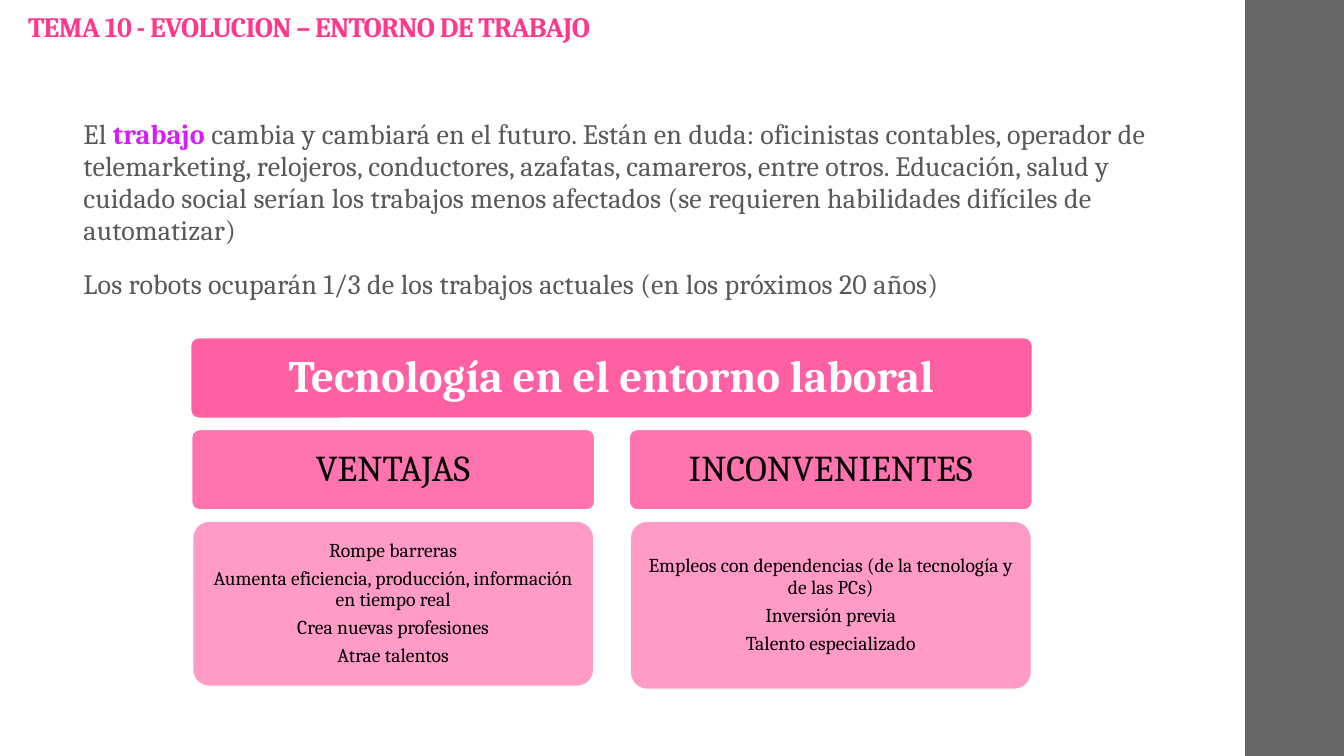
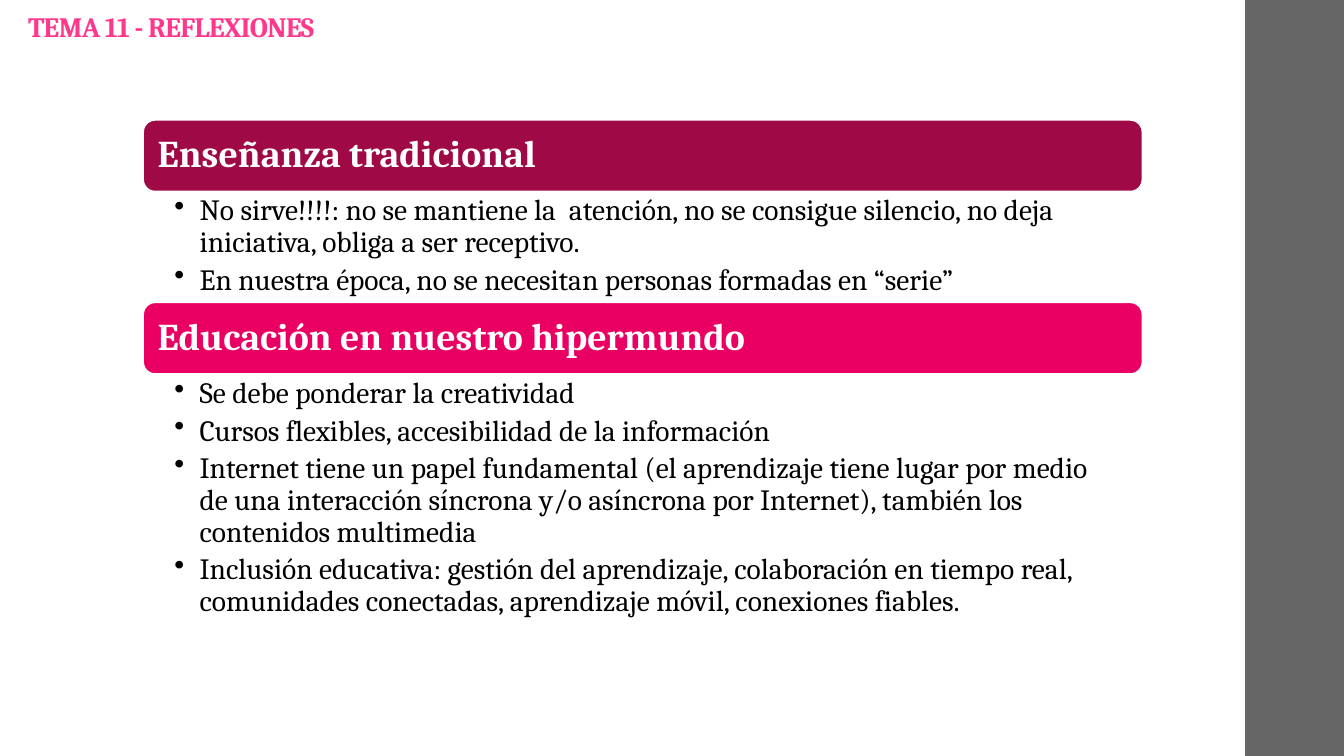
from lxml import etree
from pptx import Presentation
from pptx.dml.color import RGBColor
from pptx.enum.shapes import MSO_SHAPE
from pptx.enum.text import MSO_ANCHOR, PP_ALIGN
from pptx.oxml.ns import qn
from pptx.util import Emu, Pt

PX = 9144  # EMU per px, 100 px to the inch
SLIDE_W, SLIDE_H = 1333, 750
BAND_X = 1235

FONT = "Cambria"
PINK = RGBColor(0xFF, 0x38, 0x8C)
MAGENTA = RGBColor(0xE9, 0x00, 0x62)
WINE = RGBColor(0x9F, 0x0A, 0x46)
VIOLET = RGBColor(0xD5, 0x1D, 0xFB)
DARK_GRAY = RGBColor(0x59, 0x59, 0x59)
BAND_GRAY = RGBColor(0x66, 0x66, 0x66)
WHITE = RGBColor(0xFF, 0xFF, 0xFF)
BLACK = RGBColor(0x00, 0x00, 0x00)

RECT = MSO_SHAPE.RECTANGLE
ROUNDED = MSO_SHAPE.ROUNDED_RECTANGLE
TOP, MIDDLE, BOTTOM = MSO_ANCHOR.TOP, MSO_ANCHOR.MIDDLE, MSO_ANCHOR.BOTTOM
LEFT, CENTER = PP_ALIGN.LEFT, PP_ALIGN.CENTER

INTRO = [
    ("El ", "trabajo",
     " cambia y cambiará en el futuro. Están en duda: oficinistas contables, "
     "operador de telemarketing, relojeros, conductores, azafatas, camareros, "
     "entre otros. Educación, salud y cuidado social serían los trabajos menos "
     "afectados (se requieren habilidades difíciles de automatizar)"),
    ("Los robots ocuparán 1/3 de los trabajos actuales (en los próximos 20 años)",),
]
KEYWORD = "trabajo"

# heading, height of the list box, list
COLUMNS = [
    ("VENTAJAS", 164, [
        "Rompe barreras",
        "Aumenta eficiencia, producción, información en tiempo real",
        "Crea nuevas profesiones",
        "Atrae talentos",
    ]),
    ("INCONVENIENTES", 167, [
        "Empleos con dependencias (de la tecnología y de las PCs)",
        "Inversión previa",
        "Talento especializado",
    ]),
]

# heading, colour, top, height of the list, list
SECTIONS = [
    ("Enseñanza tradicional", WINE, 119, 110, [
        "No sirve!!!!: no se mantiene la  atención, no se consigue silencio, "
        "no deja iniciativa, obliga a ser receptivo.",
        "En nuestra época, no se necesitan personas formadas en “serie”",
    ]),
    ("Educación en nuestro hipermundo", MAGENTA, 300, 281, [
        "Se debe ponderar la creatividad",
        "Cursos flexibles, accesibilidad de la información",
        "Internet tiene un papel fundamental (el aprendizaje tiene lugar por medio "
        "de una interacción síncrona y/o asíncrona por Internet), también los "
        "contenidos multimedia",
        "Inclusión educativa: gestión del aprendizaje, colaboración en tiempo real, "
        "comunidades conectadas, aprendizaje móvil, conexiones fiables.",
    ]),
]


def px(*values):
    return [Emu(v * PX) for v in values]


def set_frame(tf, insets, anchor):
    """Wrap the text; insets run left, top, right, bottom."""
    tf.word_wrap = True
    tf.vertical_anchor = anchor
    (tf.margin_left, tf.margin_top,
     tf.margin_right, tf.margin_bottom) = px(*insets)


def style_run(r, size, color, bold=False, spacing=0):
    """Format a run; spacing is in hundredths of a point."""
    r.font.name = FONT
    r.font.size = Pt(size)
    r.font.bold = bold
    r.font.color.rgb = color
    if spacing:
        r._r.get_or_add_rPr().set("spc", str(spacing))


def add_bullet(p, indent):
    pPr = p._p.get_or_add_pPr()
    pPr.set("marL", str(indent * PX))
    pPr.set("indent", str(-indent * PX))
    etree.SubElement(pPr, qn("a:buChar")).set("char", "•")


def fill_text(tf, lines, size, color, bold=False, align=LEFT, after=0,
              spacing=0, bullet_indent=0):
    for i, line in enumerate(lines):
        p = tf.add_paragraph() if i else tf.paragraphs[0]
        p.text = line
        if bullet_indent:
            add_bullet(p, bullet_indent)
        p.alignment = align
        p.line_spacing = 0.9
        p.space_after = Pt(after)
        style_run(p.runs[0], size, color, bold, spacing)


def add_text_box(s, x, y, w, h, insets, anchor=TOP):
    tf = s.shapes.add_textbox(*px(x, y, w, h)).text_frame
    set_frame(tf, insets, anchor)
    return tf


def add_rounded_box(s, x, y, w, h, color, inset, opacity=100, corner=None):
    """White-edged box; returns its text frame."""
    sp = s.shapes.add_shape(ROUNDED, *px(x, y, w, h))
    sp.shadow.inherit = False
    if corner is not None:
        sp.adjustments[0] = corner
    sp.fill.solid()
    sp.fill.fore_color.rgb = color
    if opacity < 100:
        srgb = sp._element.spPr.find(qn("a:solidFill")).find(qn("a:srgbClr"))
        etree.SubElement(srgb, qn("a:alpha")).set("val", str(opacity * 1000))
    sp.line.color.rgb = WHITE
    sp.line.width = Pt(1.1)
    set_frame(sp.text_frame, [inset] * 4, MIDDLE)
    return sp.text_frame


def add_base_slide(prs, title):
    """Blank slide with the side band and the title."""
    s = prs.slides.add_slide(prs.slide_layouts[6])
    band = s.shapes.add_shape(RECT, *px(BAND_X, 0, SLIDE_W - BAND_X, SLIDE_H))
    band.shadow.inherit = False
    band.fill.solid()
    band.fill.fore_color.rgb = BAND_GRAY
    band.line.fill.background()
    tf = add_text_box(s, 18, 0, 1060, 48, (10, 3, 10, 5), BOTTOM)
    fill_text(tf, [title], 20, PINK, bold=True, spacing=-50)
    return s


def add_intro(s):
    tf = add_text_box(s, 73, 113, 1083, 210, (10, 5, 10, 5))
    for i, parts in enumerate(INTRO):
        p = tf.add_paragraph() if i else tf.paragraphs[0]
        p.line_spacing = 0.95
        p.space_before = Pt(14 if i else 0)
        p.space_after = Pt(2)
        for part in parts:
            r = p.add_run()
            r.text = part
            is_key = part == KEYWORD
            style_run(r, 20, VIOLET if is_key else DARK_GRAY, is_key, spacing=10)


def add_comparison(s):
    left, width, gap = 190, 400, 34
    tf = add_rounded_box(s, left - 1, 335, 2 * width + gap + 1, 80, PINK, 13, 80, 0.1)
    fill_text(tf, ["Tecnología en el entorno laboral"], 32, WHITE, True, CENTER)
    for i, (heading, height, items) in enumerate(COLUMNS):
        x = left + i * (width + gap)
        tf = add_rounded_box(s, x, 426, width, 80, PINK, 11, 70, 0.1)
        fill_text(tf, [heading], 26, BLACK, align=CENTER)
        tf = add_rounded_box(s, x + 1, 517, width - 2, height, PINK, 6, 50, 0.1)
        fill_text(tf, items, 14, BLACK, align=CENTER, after=4.9)


def add_section(s, heading, color, top, list_height, items):
    left, width, bar_height = 142, 991, 71
    tf = add_rounded_box(s, left, top, width, bar_height, color, 11)
    fill_text(tf, [heading], 27, WHITE, bold=True)
    tf = add_text_box(s, left, top + bar_height, width, list_height, (31, 4, 21, 4))
    fill_text(tf, items, 21, BLACK, after=4.2, bullet_indent=25)


def main():
    prs = Presentation()
    prs.slide_width, prs.slide_height = px(SLIDE_W, SLIDE_H)

    s = add_base_slide(prs, "TEMA 10 - EVOLUCION – ENTORNO DE TRABAJO")
    add_intro(s)
    add_comparison(s)

    s = add_base_slide(prs, "TEMA 11 - REFLEXIONES")
    for section in SECTIONS:
        add_section(s, *section)

    prs.save("out.pptx")


if __name__ == "__main__":
    main()
